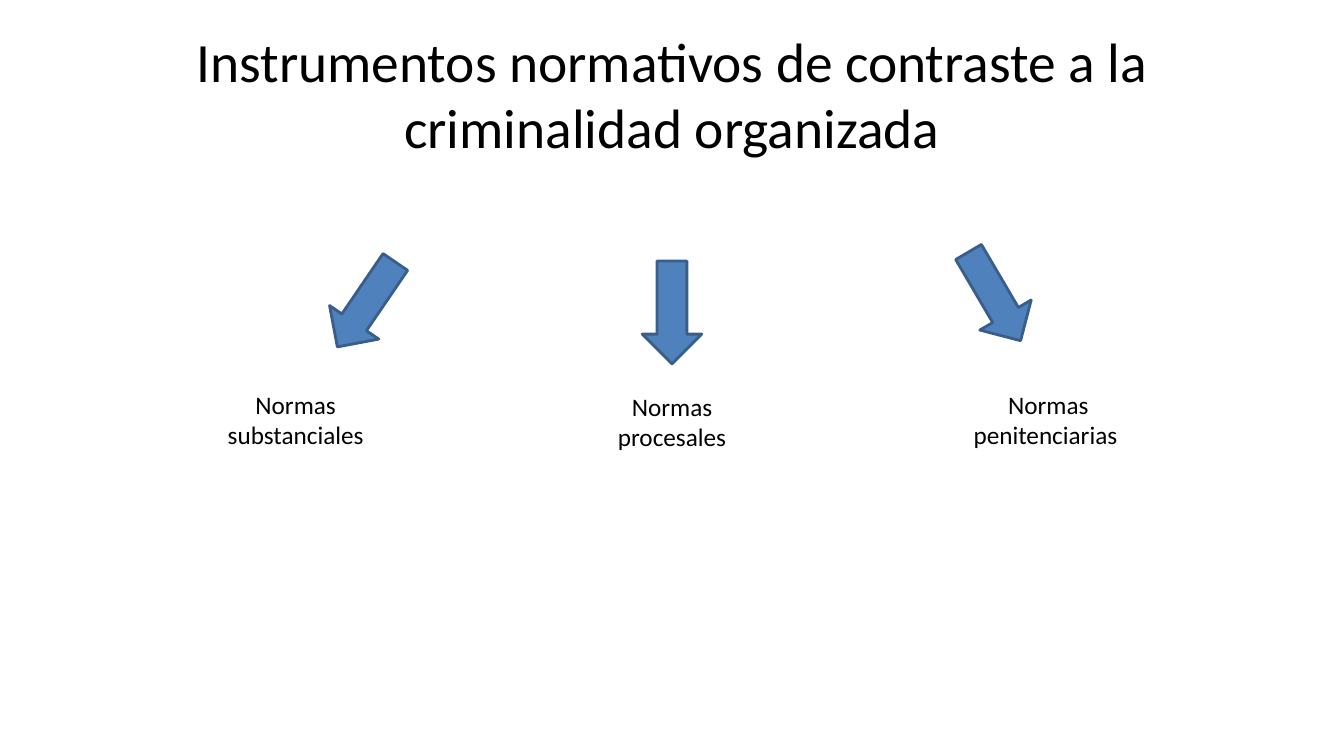
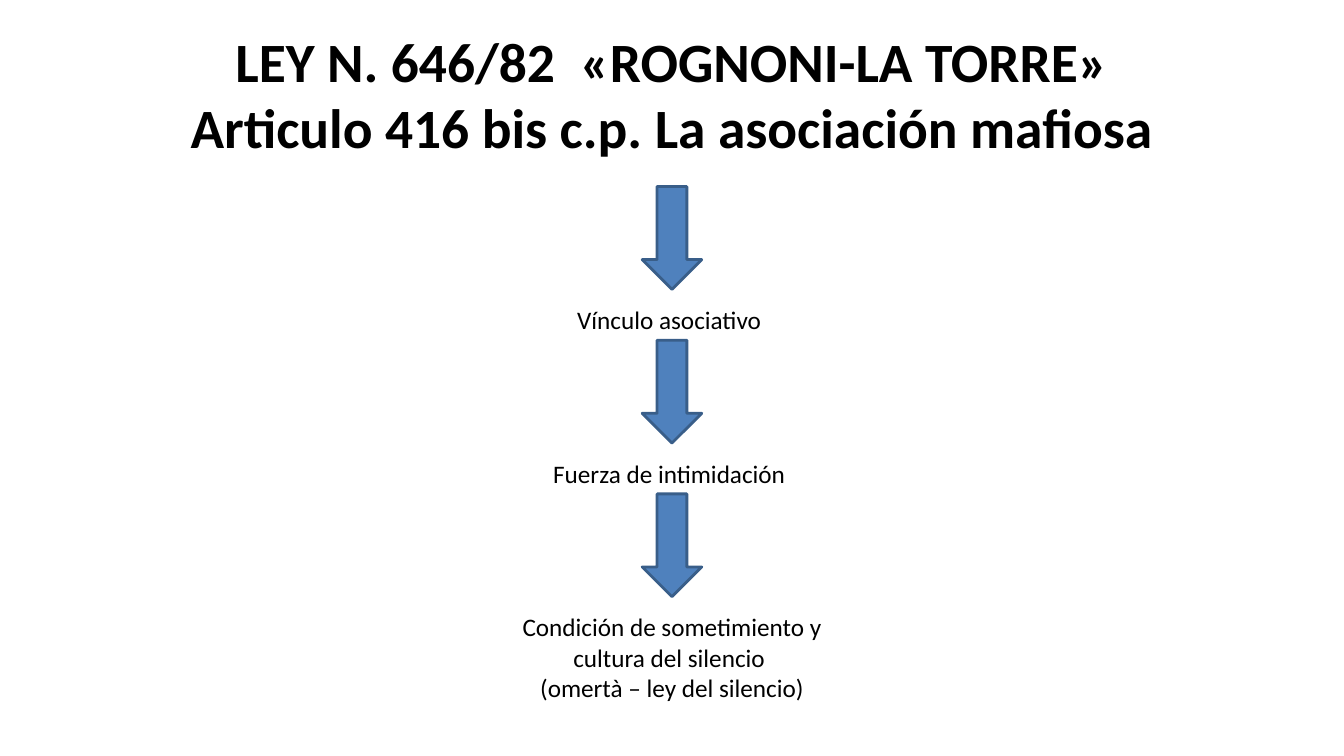
import dataclasses
import typing

import pptx
import pptx.dml.color
import pptx.enum.shapes
import pptx.enum.text
import pptx.util

SLIDE_W, SLIDE_H = pptx.util.Inches(13.33), pptx.util.Inches(7.5)
FONT = "Calibri"
BLACK, BLUE, DARK_BLUE = "000000", "4F81BD", "395E89"
CENTER = pptx.enum.text.PP_ALIGN.CENTER
TITLE_ONLY = 5

# Lengths are percentages of the slide's width or height.
TITLE_BOX = (5, 4, 90, 16.67)
ARROW_W, ARROW_H = 4.43, 13.6
MIDDLE = 50


@dataclasses.dataclass(frozen=True)
class Step:
    """An arrow and the label it points to, placed by centre and top."""
    text: str
    arrow_x: float
    arrow_top: float
    label_x: float
    label_top: float
    label_w: float
    label_h: float
    rotation: float = 0


@dataclasses.dataclass(frozen=True)
class Page:
    title: str
    bold: bool
    steps: list[Step]


def rgb(color: str) -> pptx.dml.color.RGBColor:
    return pptx.dml.color.RGBColor.from_string(color)


def box(left: float, top: float, width: float, height: float) -> tuple[int, ...]:
    return (round(SLIDE_W * left / 100), round(SLIDE_H * top / 100),
            round(SLIDE_W * width / 100), round(SLIDE_H * height / 100))


def set_all(target: typing.Any, values: dict[str, typing.Any]) -> None:
    for name, value in values.items():
        setattr(target, name, value)


def write(tf: typing.Any, text: str, size: float, bold: bool = False) -> None:
    set_all(tf, {"text": text, "word_wrap": True,
                 "auto_size": pptx.enum.text.MSO_AUTO_SIZE.NONE})
    for p in tf.paragraphs:
        p.alignment = CENTER
        for r in p.runs:
            set_all(r.font, {"name": FONT, "size": pptx.util.Pt(size), "bold": bold})
            r.font.color.rgb = rgb(BLACK)


def add_title(slide: typing.Any, text: str, bold: bool) -> None:
    sp = slide.shapes.title
    set_all(sp, dict(zip(("left", "top", "width", "height"), box(*TITLE_BOX))))
    write(sp.text_frame, text, 39.6, bold)
    sp.text_frame.vertical_anchor = pptx.enum.text.MSO_ANCHOR.MIDDLE


def add_step(slide: typing.Any, step: Step) -> None:
    sp = slide.shapes.add_shape(
        pptx.enum.shapes.MSO_SHAPE.DOWN_ARROW,
        *box(step.arrow_x - ARROW_W / 2, step.arrow_top, ARROW_W, ARROW_H))
    sp.rotation = step.rotation
    sp.shadow.inherit = False
    sp.fill.solid()
    sp.fill.fore_color.rgb = rgb(BLUE)
    sp.line.color.rgb = rgb(DARK_BLUE)
    sp.line.width = pptx.util.Pt(2)
    label = slide.shapes.add_textbox(
        *box(step.label_x - step.label_w / 2, step.label_top,
             step.label_w, step.label_h))
    write(label.text_frame, step.text, 18)


def branches() -> list[Step]:
    """Three labels in equal columns, the outer arrows slanting outwards."""
    column, width = 28, 15.68
    return [
        Step("Normas substanciales", 27.26, 33.47,
             MIDDLE - column, 50.8, width, 9.47, 34.3),
        Step("Normas procesales", MIDDLE, 34.53, MIDDLE, 51.07, width, 13.47),
        Step("Normas penitenciarias ", 74, 32.4,
             MIDDLE + column, 50.8, width, 9.47, 329.6),
    ]


def chain() -> list[Step]:
    """Arrows and labels alternating down the middle at an equal pitch."""
    first, pitch, label_drop, width = 24.67, 20.33, 14.93, 25.13
    labels = [
        ("Vínculo asociativo ", 5.33),
        ("Fuerza de intimidación ", 5.33),
        ("Condición de sometimiento y cultura del silencio \n"
         "(omertà – ley del silencio)", 13.47),
    ]
    return [Step(text, MIDDLE, first + i * pitch, MIDDLE,
                 first + i * pitch + label_drop, width, height)
            for i, (text, height) in enumerate(labels)]


def main() -> None:
    prs = pptx.Presentation()
    set_all(prs, {"slide_width": SLIDE_W, "slide_height": SLIDE_H})
    pages = [
        Page("Instrumentos normativos de contraste a la criminalidad organizada",
             False, branches()),
        Page("LEY N. 646/82  «ROGNONI-LA TORRE»\v"
             "Articulo 416 bis c.p. La asociación mafiosa", True, chain()),
    ]
    for page in pages:
        slide = prs.slides.add_slide(prs.slide_layouts[TITLE_ONLY])
        add_title(slide, page.title, page.bold)
        for step in page.steps:
            add_step(slide, step)
    prs.save("out.pptx")


if __name__ == "__main__":
    main()
